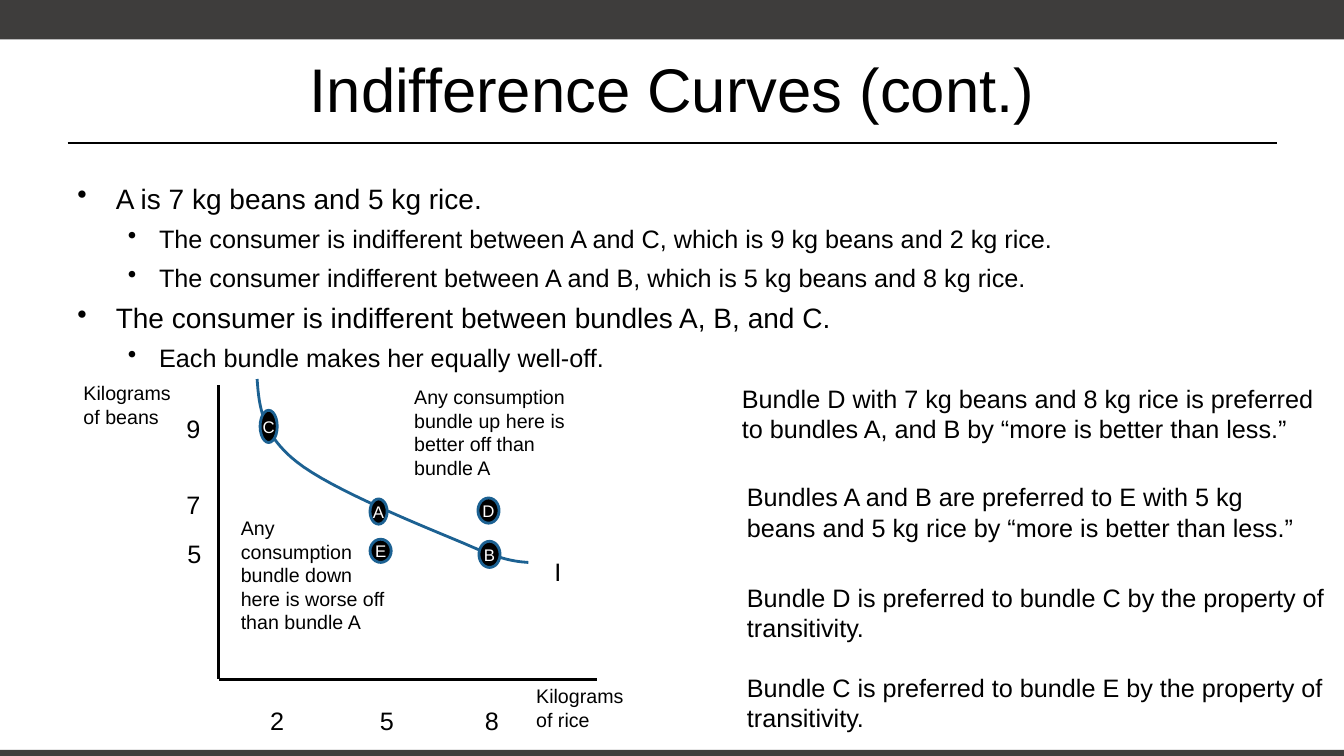
from lxml import etree
from pptx import Presentation
from pptx.dml.color import RGBColor
from pptx.enum import shapes, text
from pptx.oxml import ns
from pptx.util import Inches, Pt

BLACK = RGBColor(0, 0, 0)
WHITE = RGBColor(255, 255, 255)
BAR_GRAY = RGBColor(0x3E, 0x3D, 0x3C)
CURVE_BLUE = RGBColor(0x1C, 0x61, 0x92)
FONT = "Arial"

BULLETS = [
    (0, "A is 7 kg beans and 5 kg rice."),
    (1, "The consumer is indifferent between A and C, which is 9 kg beans and 2 kg rice."),
    (1, "The consumer indifferent between A and B, which is 5 kg beans and 8 kg rice."),
    (0, "The consumer is indifferent between bundles A, B, and C."),
    (1, "Each bundle makes her equally well-off."),
]
# Per level: font size, left margin and hanging indent
BULLET_LEVELS = [(20, 0.38, 0.38), (18, 0.81, 0.31)]

# Left, top, width, height, paragraphs
CONCLUSIONS = [
    (7.26, 3.75, 6.08, 0.7, ["Bundle D with 7 kg beans and 8 kg rice is preferred to "
                             "bundles A, and B by “more is better than less.”"]),
    (7.31, 4.73, 5.86, 0.7, ["Bundles A and B are preferred to E with 5 kg beans and "
                             "5 kg rice by “more is better than less.”"]),
    (7.31, 5.73, 6.02, 1.6, ["Bundle D is preferred to bundle C by the property of transitivity.",
                             "Bundle C is preferred to bundle E by the property of transitivity."]),
]
GRAPH_NOTES = [
    (5.22, 6.74, 1.14, 0.57, ["Kilograms", "of rice"]),
    (0.73, 3.73, 1.14, 0.57, ["Kilograms", "of beans"]),
    (4.01, 3.77, 1.7, 1.04, ["Any consumption bundle up here is better off than bundle A"]),
    (2.29, 5.07, 1.67, 1.28, ["Any consumption bundle down here is worse off than bundle A"]),
]
# Left, top, label
AXIS_VALUES = [
    (1.75, 4.05, "9"), (1.75, 4.81, "7"), (1.76, 5.29, "5"),
    (2.58, 6.95, "2"), (3.67, 6.95, "5"), (4.71, 6.95, "8"),
    (5.4, 5.47, "I"),
]
# Label, left, top, width, height
BUNDLES = [
    ("A", 3.67, 4.95, 0.17, 0.25),
    ("B", 4.75, 5.37, 0.21, 0.26),
    ("C", 2.58, 4.07, 0.17, 0.32),
    ("D", 4.74, 4.94, 0.21, 0.25),
    ("E", 3.67, 5.35, 0.21, 0.23),
]
CURVE_START = (2.55, 3.76)
CURVE_SEGMENTS = [
    ((2.57, 4.04), (2.6, 4.31), (2.94, 4.58)),
    ((3.29, 4.86), (4.22, 5.23), (4.6, 5.39)),
    ((4.98, 5.56), (5.11, 5.57), (5.24, 5.58)),
]


def style(paragraph, size, color=BLACK):
    paragraph.font.name = FONT
    paragraph.font.size = Pt(size)
    paragraph.font.color.rgb = color


def add_title(slide, title_text):
    title = slide.shapes.title
    title.left, title.top = Inches(0.67), Inches(0.25)
    title.width, title.height = Inches(12), Inches(1.25)
    title.text = title_text
    title.text_frame.vertical_anchor = text.MSO_ANCHOR.MIDDLE
    paragraph = title.text_frame.paragraphs[0]
    paragraph.alignment = text.PP_ALIGN.CENTER
    style(paragraph, 44)


def add_text(slide, left, top, width, height, lines, size, gap=0):
    box = slide.shapes.add_textbox(Inches(left), Inches(top), Inches(width), Inches(height))
    frame = box.text_frame
    frame.word_wrap = True
    frame.text = "\n".join(lines)
    for index, paragraph in enumerate(frame.paragraphs):
        style(paragraph, size)
        if index:
            paragraph.space_before = Pt(gap)
    return frame


def add_bullets(slide):
    lines = [line for _, line in BULLETS]
    frame = add_text(slide, 0.67, 1.75, 12, 2.01, lines, 20, gap=6)
    for paragraph, (level, _) in zip(frame.paragraphs, BULLETS):
        size, margin, hanging = BULLET_LEVELS[level]
        paragraph.level = level
        paragraph.font.size = Pt(size)
        properties = paragraph._p.get_or_add_pPr()
        properties.set("marL", str(Inches(margin)))
        properties.set("indent", str(-Inches(hanging)))
        bullet = etree.Element(ns.qn("a:buChar"), char="•")
        properties.find(ns.qn("a:defRPr")).addprevious(bullet)


def add_bar(slide, top, height):
    bar = slide.shapes.add_shape(shapes.MSO_SHAPE.RECTANGLE, 0, Inches(top),
                                 Inches(13.33), Inches(height))
    bar.shadow.inherit = False
    bar.fill.solid()
    bar.fill.fore_color.rgb = BAR_GRAY
    bar.line.fill.background()


def add_line(slide, start, end, width):
    line = slide.shapes.add_connector(shapes.MSO_CONNECTOR.STRAIGHT,
                                      *map(Inches, start + end))
    line.line.color.rgb = BLACK
    line.line.width = Pt(width)
    etree.SubElement(line._element.spPr, ns.qn("a:effectLst"))


def add_bundle(slide, label, left, top, width, height):
    bundle = slide.shapes.add_shape(shapes.MSO_SHAPE.OVAL, Inches(left), Inches(top),
                                    Inches(width), Inches(height))
    bundle.shadow.inherit = False
    bundle.fill.solid()
    bundle.fill.fore_color.rgb = BLACK
    bundle.line.color.rgb = CURVE_BLUE
    bundle.line.width = Pt(2)
    frame = bundle.text_frame
    frame.margin_left = frame.margin_right = frame.margin_top = frame.margin_bottom = 0
    frame.word_wrap = False
    frame.vertical_anchor = text.MSO_ANCHOR.MIDDLE
    frame.text = label
    frame.paragraphs[0].alignment = text.PP_ALIGN.CENTER
    style(frame.paragraphs[0], 12, WHITE)


def bezier_points(points, steps=16):
    for step in range(1, steps + 1):
        t = step / steps
        weights = ((1 - t) ** 3, 3 * t * (1 - t) ** 2, 3 * t ** 2 * (1 - t), t ** 3)
        yield tuple(Inches(sum(w * p[axis] for w, p in zip(weights, points)))
                    for axis in (0, 1))


def add_curve(slide):
    builder = slide.shapes.build_freeform(*map(Inches, CURVE_START))
    start = CURVE_START
    for segment in CURVE_SEGMENTS:
        builder.add_line_segments(bezier_points((start,) + segment), close=False)
        start = segment[-1]
    curve = builder.convert_to_shape()
    curve.shadow.inherit = False
    curve.fill.background()
    curve.line.color.rgb = CURVE_BLUE
    curve.line.width = Pt(2)


def main():
    presentation = Presentation()
    presentation.slide_width = Inches(13.33)
    presentation.slide_height = Inches(7.5)
    slide = presentation.slides.add_slide(presentation.slide_layouts[5])

    # Frame and heading
    add_bar(slide, 0, 0.39)
    add_bar(slide, 7.44, 0.06)
    add_line(slide, (0.67, 1.42), (12.67, 1.42), 1.25)
    add_title(slide, "Indifference Curves (cont.)")

    # Explanations
    add_bullets(slide)
    for left, top, width, height, lines in CONCLUSIONS:
        add_text(slide, left, top, width, height, lines, 18, gap=21)

    # Graph
    add_line(slide, (2.17, 3.82), (2.17, 6.74), 2)
    add_line(slide, (2.17, 6.74), (5.92, 6.74), 2)
    for left, top, width, height, lines in GRAPH_NOTES:
        add_text(slide, left, top, width, height, lines, 14)
    for left, top, label in AXIS_VALUES:
        add_text(slide, left, top, 0.34, 0.4, [label], 18)
    add_curve(slide)
    for bundle in BUNDLES:
        add_bundle(slide, *bundle)

    presentation.save("out.pptx")


if __name__ == "__main__":
    main()
